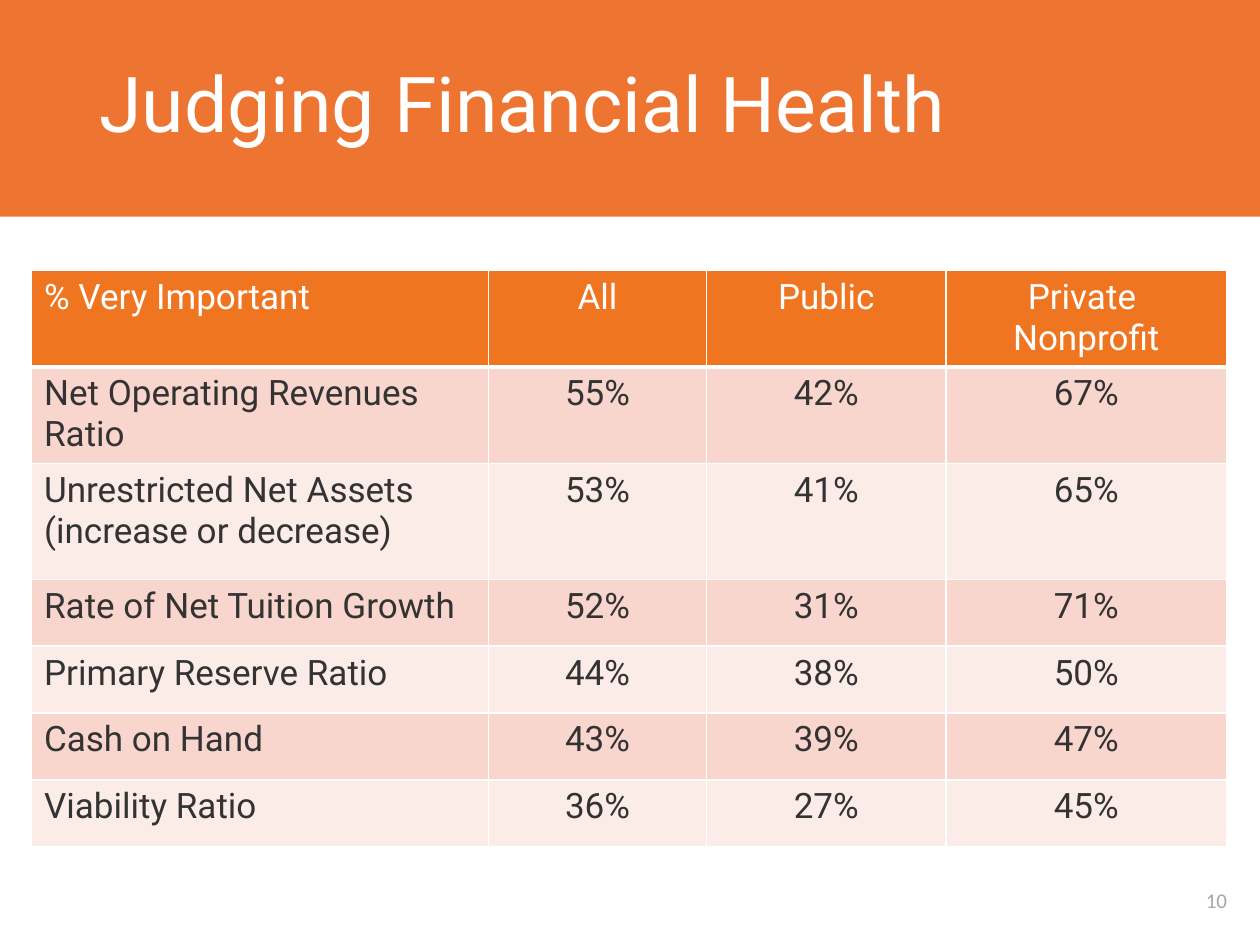
from lxml.etree import SubElement
from pptx import Presentation
from pptx.dml.color import RGBColor
from pptx.enum.shapes import MSO_SHAPE as Shape
from pptx.enum.text import MSO_ANCHOR as Anchor, PP_ALIGN as Align
from pptx.oxml.ns import qn
from pptx.util import Pt

WHITE = "FFFFFF"
HEADER_FILL = "EF7521"
BAND_FILLS = ["F9D6CD", "FCECE8"]
COLUMN_WIDTHS = [261.2, 124.6, 136.8, 160.4]
ROW_HEIGHTS = [49.7, 38.2, 66.2] + [38.2] * 4
ROWS = [
    ["% Very Important", "All", "Public", "Private \nNonprofit"],
    ["Net Operating Revenues Ratio", "55%", "42%", "67%"],
    ["Unrestricted Net Assets (increase or decrease)", "53%", "41%", "65%"],
    ["Rate of Net Tuition Growth", "52%", "31%", "71%"],
    ["Primary Reserve Ratio", "44%", "38%", "50%"],
    ["Cash on Hand", "43%", "39%", "47%"],
    ["Viability Ratio", "36%", "27%", "45%"],
]


def color(value):
    return RGBColor.from_string(value)


def paint(target, value):
    target.fill.solid()
    target.fill.fore_color.rgb = color(value)


def write(frame, text, size, font, ink, align=Align.LEFT):
    para = frame.paragraphs[0]
    para.alignment = align
    for number, line in enumerate(text.split("\n")):
        if number:
            para.add_line_break()
        span = para.add_run()
        span.text = line
        span.font.size = Pt(size)
        span.font.name = font
        span.font.color.rgb = color(ink)
    return para


def add_band(page, left, top, width, height, fill):
    band = page.shapes.add_shape(Shape.RECTANGLE, Pt(left), Pt(top), Pt(width), Pt(height))
    band.shadow.inherit = False
    paint(band, fill)
    band.line.fill.background()


def add_text(page, left, top, width, height, *style):
    box = page.shapes.add_textbox(Pt(left), Pt(top), Pt(width), Pt(height))
    frame = box.text_frame
    frame.word_wrap = True
    frame.vertical_anchor = Anchor.MIDDLE
    return write(frame, *style)


def add_borders(cell, bottom):
    properties = cell._tc.get_or_add_tcPr()
    for side, width in (("L", 1), ("R", 1), ("T", 1), ("B", bottom)):
        line = SubElement(properties, qn(f"a:ln{side}"), w=str(Pt(width)))
        fill = SubElement(line, qn("a:solidFill"))
        SubElement(fill, qn("a:srgbClr"), val=WHITE)


def add_ratio_table(page, left, top):
    frame = page.shapes.add_table(
        len(ROWS), len(COLUMN_WIDTHS), Pt(left), Pt(top),
        Pt(sum(COLUMN_WIDTHS)), Pt(sum(ROW_HEIGHTS)))
    table = frame.table
    for column, width in zip(table.columns, COLUMN_WIDTHS):
        column.width = Pt(width)
    for row, height in zip(table.rows, ROW_HEIGHTS):
        row.height = Pt(height)

    for r, texts in enumerate(ROWS):
        header = r == 0
        fill = HEADER_FILL if header else BAND_FILLS[(r - 1) % 2]
        for c, text in enumerate(texts):
            cell = table.cell(r, c)
            add_borders(cell, 3 if header else 1)
            paint(cell, fill)
            write(cell.text_frame, text, 20, "Roboto",
                  WHITE if header else "333333",
                  Align.CENTER if c else Align.LEFT)


def main():
    deck = Presentation()
    deck.slide_width, deck.slide_height = Pt(720), Pt(540)
    page = deck.slides.add_slide(deck.slide_layouts[6])

    # Title band and page number
    add_band(page, -0.7, 0, 721.4, 123.8, "EE7531")
    add_text(page, 670.3, 500.4, 49.7, 28.1, "10", 12, "Calibri", "A6A6A6", Align.CENTER)
    title = add_text(page, 49.7, 0, 620.6, 123.1,
                     "Judging Financial Health", 44, "Roboto", WHITE)
    title.line_spacing = 0.9

    # Ratios by type of institution
    add_ratio_table(page, 18, 154.4)

    deck.save("out.pptx")


if __name__ == "__main__":
    main()
